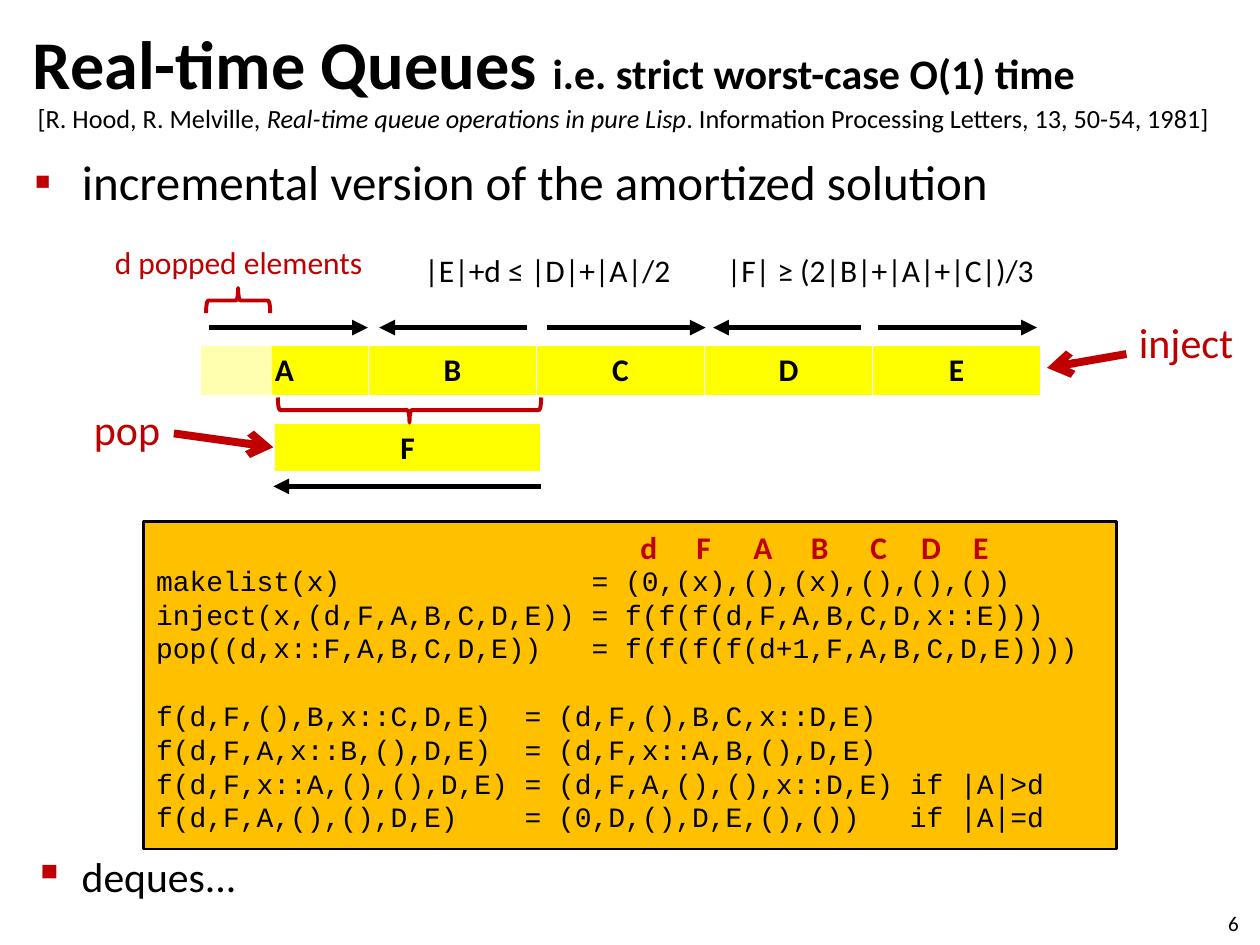
import dataclasses
import typing

import lxml.etree
import pptx
import pptx.dml.color
import pptx.enum.shapes
import pptx.enum.text
import pptx.oxml.ns
import pptx.util

Inches = pptx.util.Inches
Pt = pptx.util.Pt
Align = pptx.enum.text.PP_ALIGN
Shape = pptx.enum.shapes.MSO_SHAPE
qn = pptx.oxml.ns.qn

COLORS = {"black": "000000", "white": "FFFFFF", "red": "C00000", "yellow": "FFFF00", "orange": "FFC000"}
NO_TABLE_STYLE = "{2D5ABB26-0587-4C30-8999-92F81FD0307C}"
CODE_LINE_HEIGHT = Pt(19.3)
CODE = [
    "makelist(x)               = (0,(x),(),(x),(),(),())",
    "inject(x,(d,F,A,B,C,D,E)) = f(f(f(d,F,A,B,C,D,x::E)))",
    "pop((d,x::F,A,B,C,D,E))   = f(f(f(f(d+1,F,A,B,C,D,E))))",
    "f(d,F,(),B,x::C,D,E)  = (d,F,(),B,C,x::D,E)",
    "f(d,F,A,x::B,(),D,E)  = (d,F,x::A,B,(),D,E)",
    "f(d,F,x::A,(),(),D,E) = (d,F,A,(),(),x::D,E) if |A|>d",
    "f(d,F,A,(),(),D,E)    = (0,D,(),D,E,(),())   if |A|=d",
]
FIRST_RULE = 3


@dataclasses.dataclass
class Box:
    left: float
    top: float
    width: float
    height: float

    def lengths(self) -> list:
        return [Inches(value) for value in (self.left, self.top, self.width, self.height)]


@dataclasses.dataclass
class Label:
    text: str
    box: Box
    size: float = 18
    color: str = "black"
    align: Align = Align.LEFT


@dataclasses.dataclass
class Arrow:
    start: tuple
    end: tuple
    color: str = "black"
    width: float = 3
    head: str = "triangle"


@dataclasses.dataclass
class Row:
    letters: str
    box: Box
    widths: list
    color: str = "black"
    fill: typing.Optional[str] = None


def rgb(name: str):
    return pptx.dml.color.RGBColor.from_string(COLORS[name])


def format_run(run, size: float, color: str = "black", bold: bool = False, name: str = "Calibri") -> None:
    run.font.name = name
    run.font.size = Pt(size)
    run.font.bold = bold
    run.font.color.rgb = rgb(color)


def place(shape, box: Box) -> None:
    shape.left, shape.top, shape.width, shape.height = box.lengths()


def hang(paragraph, indent: float = 0.38):
    properties = paragraph._p.get_or_add_pPr()
    properties.set("marL", str(Inches(indent)))
    properties.set("indent", str(-Inches(indent)))
    return properties


def add_bullet(paragraph, size: float) -> None:
    paragraph.space_before = Pt(size * 0.2)
    properties = hang(paragraph)
    color = lxml.etree.SubElement(properties, qn("a:buClr"))
    lxml.etree.SubElement(color, qn("a:srgbClr"), val=COLORS["red"])
    lxml.etree.SubElement(properties, qn("a:buChar"), char="▪")
    format_run(paragraph.runs[0], size)


def add_label(slide, label: Label):
    shape = slide.shapes.add_textbox(*label.box.lengths())
    shape.text_frame.word_wrap = True
    shape.text_frame.text = label.text
    paragraph = shape.text_frame.paragraphs[0]
    paragraph.alignment = label.align
    format_run(paragraph.runs[0], label.size, label.color)
    return paragraph


def add_arrow(slide, arrow: Arrow) -> None:
    points = [Inches(value) for value in (*arrow.start, *arrow.end)]
    connector = slide.shapes.add_connector(pptx.enum.shapes.MSO_CONNECTOR.STRAIGHT, *points)
    connector.line.color.rgb = rgb(arrow.color)
    connector.line.width = Pt(arrow.width)
    lxml.etree.SubElement(connector.line._get_or_add_ln(), qn("a:tailEnd"), type=arrow.head)
    lxml.etree.SubElement(connector._element.spPr, qn("a:effectLst"))


def add_shape(slide, kind: Shape, box: Box, fill: str = "", line: str = "", line_width: float = 1):
    shape = slide.shapes.add_shape(kind, *box.lengths())
    shape.shadow.inherit = False
    if fill:
        shape.fill.solid()
        shape.fill.fore_color.rgb = rgb(fill)
    else:
        shape.fill.background()
    if line:
        shape.line.color.rgb = rgb(line)
        shape.line.width = Pt(line_width)
    else:
        shape.line.fill.background()
    return shape


def add_brace(slide, box: Box, rotation: int) -> None:
    add_shape(slide, Shape.RIGHT_BRACE, box, line="red", line_width=2.25).rotation = rotation


def add_borders(cell) -> None:
    properties = cell._tc.get_or_add_tcPr()
    for side, width in (("L", 1), ("R", 1), ("T", 1), ("B", 3)):
        line = lxml.etree.SubElement(properties, qn("a:ln" + side), w=str(Pt(width)))
        fill = lxml.etree.SubElement(line, qn("a:solidFill"))
        lxml.etree.SubElement(fill, qn("a:srgbClr"), val=COLORS["white"])


def add_row(slide, row: Row) -> None:
    table = slide.shapes.add_table(1, len(row.letters), *row.box.lengths()).table
    table.first_row = table.horz_banding = False
    table._tbl.tblPr.find(qn("a:tableStyleId")).text = NO_TABLE_STYLE
    for column, width in zip(table.columns, row.widths):
        column.width = Inches(width)
    for cell, letter in zip(table.iter_cells(), row.letters):
        if row.fill:
            add_borders(cell)
            cell.fill.solid()
            cell.fill.fore_color.rgb = rgb(row.fill)
        else:
            cell.fill.background()
        cell.text_frame.text = letter
        paragraph = cell.text_frame.paragraphs[0]
        paragraph.alignment = Align.CENTER
        format_run(paragraph.runs[0], 18, row.color, bold=True)


def add_code(slide) -> None:
    shape = add_shape(slide, Shape.RECTANGLE, Box(1.14, 4.14, 7.72, 2.6), "orange", "black", 1.5)
    frame = shape.text_frame
    frame.vertical_anchor = pptx.enum.text.MSO_ANCHOR.TOP
    frame.margin_top = Inches(0.33)
    frame.text = "\n".join(CODE)
    for index, paragraph in enumerate(frame.paragraphs):
        paragraph.alignment = Align.LEFT
        paragraph.line_spacing = CODE_LINE_HEIGHT
        if index == FIRST_RULE:
            paragraph.space_before = CODE_LINE_HEIGHT
        hang(paragraph)
        format_run(paragraph.runs[0], 16, name="Courier New")


def add_headings(slide) -> None:
    title = slide.shapes.title
    place(title, Box(0.16, 0, 9.84, 0.99))
    title.text_frame.vertical_anchor = pptx.enum.text.MSO_ANCHOR.MIDDLE
    paragraph = title.text_frame.paragraphs[0]
    paragraph.alignment = Align.LEFT
    for text, size in (("Real-time Queues ", 39), ("i.e. strict worst-case O(1) time", 24)):
        run = paragraph.add_run()
        run.text = text
        format_run(run, size, bold=True)

    body = slide.placeholders[1]
    place(body, Box(0.17, 1.15, 9, 0.62))
    body.text_frame.text = "incremental version of the amortized solution"
    body.text_frame.auto_size = pptx.enum.text.MSO_AUTO_SIZE.NONE
    add_bullet(body.text_frame.paragraphs[0], 28)

    citation = add_label(slide, Label("[R. Hood, R. Melville, ", Box(0.2, 0.76, 9.7, 0.39), 15))
    for text, italic in (("Real-time queue operations in pure Lisp", True),
                         (". Information Processing Letters, 13, 50-54, 1981]", False)):
        run = citation.add_run()
        run.text = text
        format_run(run, 15)
        run.font.italic = italic


def add_queue(slide) -> None:
    add_row(slide, Row("F", Box(2.18, 3.36, 2.11, 0.4), [2.11], fill="yellow"))
    add_row(slide, Row("ABCDE", Box(1.59, 2.74, 6.67, 0.41), [6.67 / 5] * 5, fill="yellow"))
    for start, end in ((1.66, 2.92), (4.18, 3.01), (4.34, 5.6), (6.83, 5.66), (6.97, 8.23)):
        add_arrow(slide, Arrow((start, 2.6), (end, 2.6)))
    add_arrow(slide, Arrow((4.29, 3.86), (2.17, 3.86)))
    popped = add_shape(slide, Shape.RECTANGLE, Box(1.22, 2.68, 0.94, 0.55), "white")
    color = popped._element.spPr.find(qn("a:solidFill")).find(qn("a:srgbClr"))
    lxml.etree.SubElement(color, qn("a:alpha"), val="68000")
    add_brace(slide, Box(1.79, 2.13, 0.2, 0.51), 270)
    add_brace(slide, Box(3.15, 2.21, 0.2, 2.09), 90)
    add_arrow(slide, Arrow((1.38, 3.44), (2.17, 3.55), "red", 4.5, "arrow"))
    add_arrow(slide, Arrow((8.94, 2.81), (8.31, 2.92), "red", 4.5, "arrow"))
    popped_label = Label("d popped elements", Box(0.28, 1.94, 3.23, 0.35), 18, "red", Align.CENTER)
    add_label(slide, popped_label).line_spacing = Pt(17)
    for label in (
        Label("pop", Box(0, 3.15, 1.37, 0.5), 24, "red", Align.RIGHT),
        Label("inject", Box(8.94, 2.46, 1.06, 0.5), 24, "red"),
        Label("|E|+d ≤ |D|+|A|/2", Box(3.27, 1.94, 2.35, 0.4)),
        Label("|F| ≥ (2|B|+|A|+|C|)/3", Box(5.67, 1.94, 2.9, 0.4)),
    ):
        add_label(slide, label)


def main() -> None:
    presentation = pptx.Presentation()
    presentation.slide_width, presentation.slide_height = Inches(10), Inches(7.5)
    slide = presentation.slides.add_slide(presentation.slide_layouts[1])
    add_headings(slide)
    add_code(slide)
    add_queue(slide)
    widths = [0.36, 0.51, 0.43, 0.47, 0.47, 0.36, 0.43]
    add_row(slide, Row("dFABCDE", Box(4.97, 4.15, sum(widths), 0.41), widths, "red"))
    deques = add_label(slide, Label("deques...", Box(0.17, 6.75, 1.91, 0.62)))
    deques.line_spacing = 0.9
    add_bullet(deques, 23.8)
    add_label(slide, Label("6", Box(7.6, 7.18, 2.33, 0.3), 12, align=Align.RIGHT))
    presentation.save("out.pptx")


if __name__ == "__main__":
    main()
